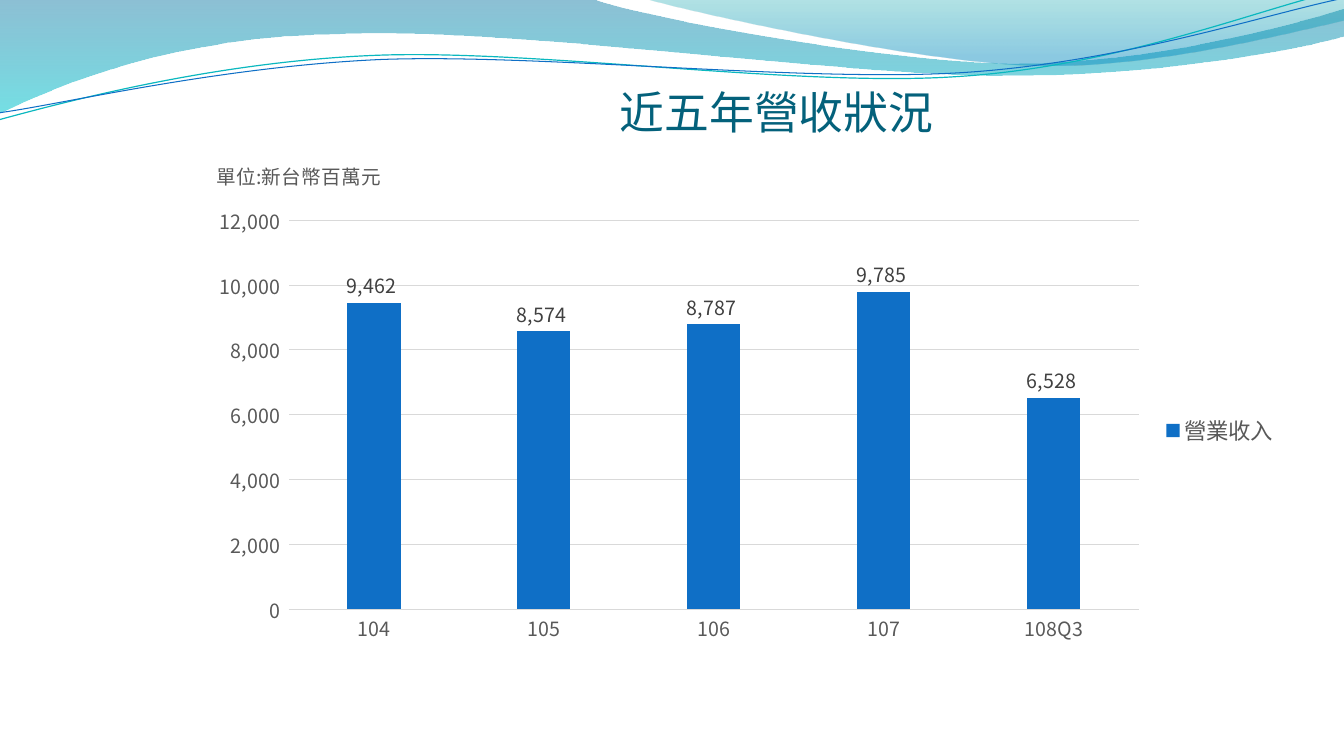
import pptx
import pptx.chart.data
import pptx.dml.color
import pptx.enum.chart
import pptx.enum.text
import pptx.oxml
import pptx.oxml.ns
import pptx.util
from dataclasses import dataclass

Cm = pptx.util.Cm
Pt = pptx.util.Pt
qn = pptx.oxml.ns.qn
rgb = pptx.dml.color.RGBColor.from_string


@dataclass(frozen=True)
class Theme:
    font: str = "Noto Sans CJK SC"
    heading: str = "04617B"
    bar: str = "0F6FC6"
    teal: str = "0AB8BF"
    text: str = "595959"
    label: str = "404040"
    grid: str = "D9D9D9"
    heading_size: int = 32
    legend_size: int = 16
    chart_size: int = 14
    number_format: str = r"#,##0_);[Red]\(#,##0\)"


def child(parent, tag, **attrs):
    el = parent.makeelement(qn(tag), attrs)
    parent.append(el)
    return el


class Deck:
    def __init__(self, theme):
        self.theme = theme
        self.prs = pptx.Presentation()
        self.prs.slide_width, self.prs.slide_height = Cm(33.87), Cm(19.05)
        self.s = self.prs.slides.add_slide(self.prs.slide_layouts[6])

    def style(self, font, size, color):
        font.name, font.size, font.bold = self.theme.font, Pt(size), False
        font.color.rgb = rgb(color)

    def east_asian(self, root):
        """Use the theme font for Chinese characters as well."""
        for latin in list(root.iter(qn("a:latin"))):
            latin.addnext(latin.makeelement(qn("a:ea"), {"typeface": self.theme.font}))

    def outline(self, start, segments, close):
        """Segments hold 2 numbers for a line, 6 for a cubic curve."""
        points = [(Cm(x), Cm(y)) for seg in segments for x, y in zip(seg[::2], seg[1::2])]
        fb = self.s.shapes.build_freeform(Cm(start[0]), Cm(start[1]))
        fb.add_line_segments(points, close=close)
        sp = fb.convert_to_shape()
        sp.shadow.inherit = False
        # Join each three points of a curve into one Bezier segment
        lines = iter(list(sp._element.iter(qn("a:lnTo"))))
        for seg in segments:
            first = next(lines)
            if len(seg) == 6:
                first.tag = qn("a:cubicBezTo")
                for _ in range(2):
                    extra = next(lines)
                    first.append(extra[0])
                    extra.getparent().remove(extra)
        return sp

    def wave(self, start, segments, stops):
        sp = self.outline(start, segments, True)
        sp.line.fill.background()
        sp.fill.gradient()
        sp.fill.gradient_angle = 270
        for stop, (position, color, _) in zip(sp.fill.gradient_stops, stops):
            stop.position, stop.color.rgb = position, rgb(color)
        colors = sp._element.spPr.iter(qn("a:srgbClr"))
        for el, (_, _, opacity) in zip(colors, stops):
            child(el, "a:alpha", val=str(opacity * 1000))

    def curve(self, start, segments, color, width):
        sp = self.outline(start, segments, False)
        sp.fill.background()
        sp.line.color.rgb, sp.line.width = rgb(color), Pt(width)

    def heading(self, text, x, y, w, h):
        tf = self.s.shapes.add_textbox(Cm(x), Cm(y), Cm(w), Cm(h)).text_frame
        tf.word_wrap = True
        tf.vertical_anchor = pptx.enum.text.MSO_ANCHOR.BOTTOM
        tf.margin_left = tf.margin_right = tf.margin_bottom = 0
        tf.margin_top = Cm(0.13)
        p = tf.paragraphs[0]
        p.text, p.alignment = text, pptx.enum.text.PP_ALIGN.CENTER
        self.style(p.font, self.theme.heading_size, self.theme.heading)
        self.east_asian(p._p)

    def place(self, part, after, *box):
        """Fix the position of a chart part, in percent of the chart."""
        for old in part.findall(qn("c:layout")):
            part.remove(old)
        layout = part.makeelement(qn("c:layout"), {})
        part.insert(part.index(part.find(qn(after))) + 1 if after else 0, layout)
        manual = child(layout, "c:manualLayout")
        if len(box) == 4:
            child(manual, "c:layoutTarget", val="inner")
        for tag in ("c:xMode", "c:yMode"):
            child(manual, tag, val="edge")
        for tag, percent in zip(("c:x", "c:y", "c:w", "c:h"), box):
            child(manual, tag, val=str(percent / 100))

    def column_chart(self, title, cats, name, values, x, y, w, h):
        th, xl = self.theme, pptx.enum.chart
        data = pptx.chart.data.CategoryChartData(number_format=th.number_format)
        data.categories = cats
        data.add_series(name, values)
        chart = self.s.shapes.add_chart(xl.XL_CHART_TYPE.COLUMN_CLUSTERED,
                                        Cm(x), Cm(y), Cm(w), Cm(h), data).chart
        self.style(chart.font, th.chart_size, th.text)

        # Title
        p = chart.chart_title.text_frame.paragraphs[0]
        p.text = title
        self.style(p.font, th.chart_size, th.text)

        # Axes
        for axis in (chart.category_axis, chart.value_axis):
            axis.major_tick_mark = axis.minor_tick_mark = xl.XL_TICK_MARK.NONE
            self.style(axis.tick_labels.font, th.chart_size, th.text)
        axis.minimum_scale, axis.maximum_scale, axis.major_unit = 0, 12000, 2000
        axis.tick_labels.number_format = th.number_format
        axis.tick_labels.number_format_is_linked = False
        axis.format.line.fill.background()
        for part in (axis.major_gridlines, chart.category_axis):
            part.format.line.color.rgb, part.format.line.width = rgb(th.grid), Pt(0.75)

        # Columns and their labels
        plot = chart.plots[0]
        plot.vary_by_categories, plot.gap_width, plot.overlap = False, 219, -27
        series = plot.series[0]
        series.format.fill.solid()
        series.format.fill.fore_color.rgb = rgb(th.bar)
        labels = series.data_labels
        labels.show_value = True
        labels.position = xl.XL_LABEL_POSITION.OUTSIDE_END
        labels.number_format, labels.number_format_is_linked = th.number_format, False
        self.style(labels.font, th.chart_size, th.label)

        # Legend
        chart.has_legend = True
        chart.legend.position = xl.XL_LEGEND_POSITION.RIGHT
        chart.legend.include_in_layout = False
        self.style(chart.legend.font, th.legend_size, th.text)

        # Positions of the parts
        root = chart._chartSpace
        self.east_asian(root)
        self.place(next(root.iter(qn("c:title"))), "c:tx", 1.4, 2.6)
        self.place(next(root.iter(qn("c:plotArea"))), None, 8.36, 15.36, 77.79, 76.27)
        self.place(next(root.iter(qn("c:legend"))), "c:legendPos", 88, 52.6)


def main():
    th = Theme()
    deck = Deck(th)

    # Waves along the top
    deck.wave((0, 0), [(14.91, -0.03), (16.1, 0.43, 22.48, 1.6, 25.68, 1.6),
                       (28.91, 1.6, 32.46, 0.66, 33.86, 0.23), (33.91, 0.91),
                       (33.3, 1.12, 29.46, 1.93, 25.25, 1.91),
                       (21.06, 1.91, 12.93, 0.71, 8.71, 0.86),
                       (4.37, 0.91, 1.55, 2.11, -0.03, 2.87)],
              [(0, "0074A1", 45), (1, "00C6CF", 55)])
    deck.wave((16.23, -0.03), [(17.25, 0.28, 23.09, 1.57, 26.04, 1.65),
                               (28.98, 1.75, 32.56, 0.81, 33.86, 0.53), (33.86, 0)],
              [(0, "00A1A9", 30), (0.8, "008BBF", 45)])
    deck.curve((-0.03, 3.02), [(1.63, 2.57, 5.36, 1.57, 9.37, 1.4),
                               (13.39, 1.22, 20.07, 2.21, 24.13, 1.93),
                               (28.19, 1.68, 31.8, 0.2, 33.81, -0.25)], th.teal, 0.85)
    deck.curve((0, 2.84), [(1.6, 2.62, 5.54, 1.68, 9.6, 1.5),
                           (13.64, 1.35, 20.22, 2.08, 24.26, 1.83),
                           (28.32, 1.57, 31.88, 0.36, 33.88, -0.05)], th.bar, 0.75)

    # Heading and revenue chart
    deck.heading("近五年營收狀況", 7.19, 1.96, 24.77, 1.52)
    deck.column_chart("單位:新台幣百萬元", ["104", "105", "106", "107", "108Q3"],
                      "營業收入", [9462, 8574, 8787, 9785, 6528], 4.98, 3.58, 27.53, 12.85)
    deck.prs.save("out.pptx")


if __name__ == "__main__":
    main()
